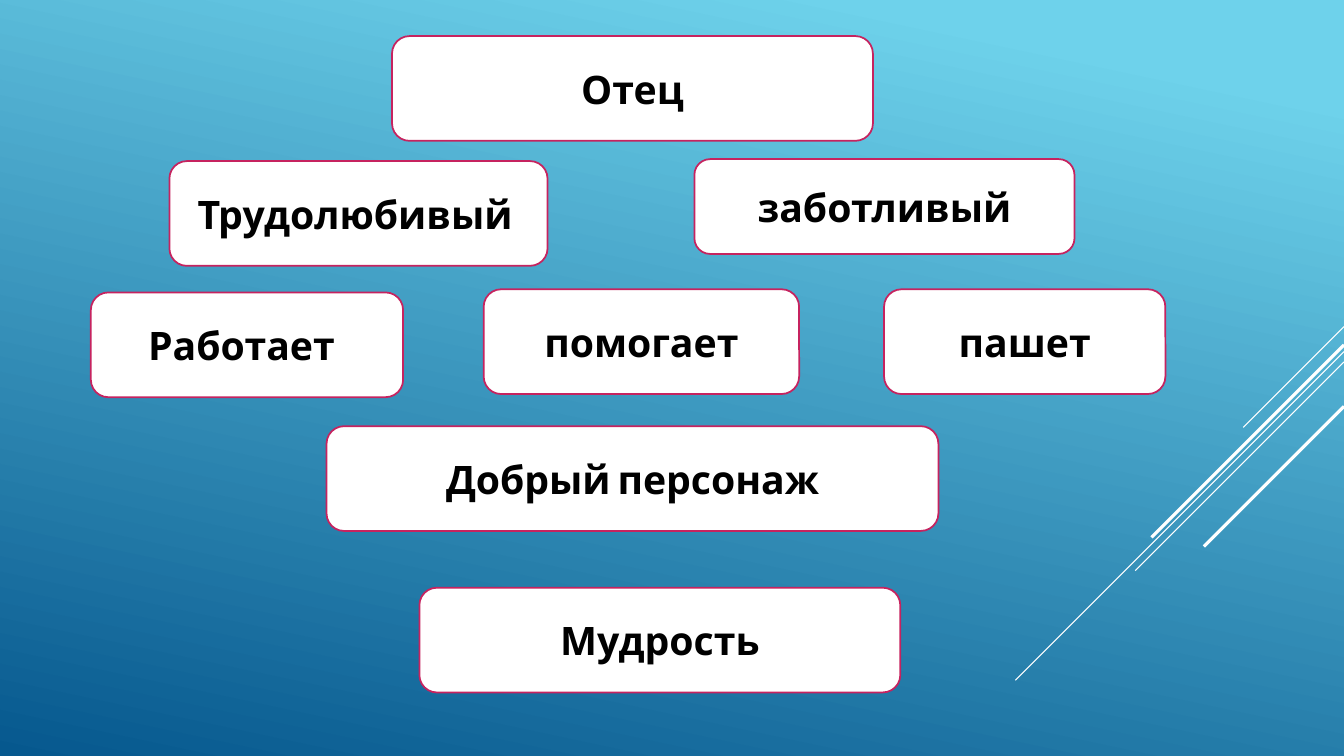
from dataclasses import dataclass

from lxml.etree import SubElement
from pptx import Presentation
from pptx.dml.color import RGBColor
from pptx.enum.shapes import MSO_CONNECTOR as Connector, MSO_SHAPE as Preset
from pptx.enum.text import MSO_ANCHOR as Anchor, PP_ALIGN as Align
from pptx.oxml.ns import qn
from pptx.util import Cm, Pt

# Content: text runs, left, top, width (cm); a lone space is a small gap
ROW_HEIGHT = 2.64
CARDS = [
    (["Отец"], 9.88, 0.91, 12.12, ROW_HEIGHT),
    (["заботливый"], 17.5, 4.01, 9.58, 2.39),
    (["Трудолюбивый", " "], 4.27, 4.06, 9.53, ROW_HEIGHT),
    (["пашет"], 22.28, 7.29, 7.09, ROW_HEIGHT),
    (["помогает"], 12.19, 7.29, 7.95, ROW_HEIGHT),
    (["Работает "], 2.29, 7.37, 7.87, ROW_HEIGHT),
    (["Добрый", " ", "персонаж"], 8.23, 10.74, 15.42, ROW_HEIGHT),
    (["Мудрость"], 10.57, 14.81, 12.12, ROW_HEIGHT),
]

# Diagonals from the right edge: top, horizontal reach (cm), line width (pt)
DIAGONALS = [
    (8.23, 2.54, 0.75),
    (8.86, 8.28, 0.75),
    (9.12, 5.26, 0.75),
    (8.69, 4.85, 2.25),
    (10.24, 3.53, 2.25),
]
SLIDE_WIDTH, SLIDE_HEIGHT = 33.87, 19.05


@dataclass(frozen=True)
class Theme:
    font: str = "Quicksand"
    word_size: float = 28
    gap_size: float = 18
    text: RGBColor = RGBColor(0, 0, 0)
    white: RGBColor = RGBColor(255, 255, 255)
    border: RGBColor = RGBColor.from_string("C6235F")
    border_width: float = 1.25
    sky: RGBColor = RGBColor.from_string("6ED2EB")
    sea: RGBColor = RGBColor.from_string("06588E")
    gradient_angle: float = 258


THEME = Theme()


def paint_background(slide):
    fill = slide.background.fill
    fill.gradient()
    fill.gradient_angle = THEME.gradient_angle
    stops = [(0.1, THEME.sky), (1, THEME.sea)]
    for stop, (position, color) in zip(fill.gradient_stops, stops):
        stop.position = position
        stop.color.rgb = color


def add_diagonal(slide, top, reach, width):
    line = slide.shapes.add_connector(
        Connector.STRAIGHT, Cm(SLIDE_WIDTH), Cm(top),
        Cm(SLIDE_WIDTH - reach), Cm(top + reach))
    line.line.color.rgb = THEME.white
    line.line.width = Pt(width)
    SubElement(line._element.spPr, qn("a:effectLst"))


def add_text(paragraph, text, *, size, bold, color=THEME.text):
    run = paragraph.add_run()
    run.text = text
    run.font.name = THEME.font
    run.font.size = Pt(size)
    run.font.bold = bold
    run.font.color.rgb = color


def add_card(slide, words, left, top, width, height):
    shape = slide.shapes.add_shape(
        Preset.ROUNDED_RECTANGLE, Cm(left), Cm(top), Cm(width), Cm(height))
    shape.shadow.inherit = False
    shape.fill.solid()
    shape.fill.fore_color.rgb = THEME.white
    shape.line.color.rgb = THEME.border
    shape.line.width = Pt(THEME.border_width)

    frame = shape.text_frame
    frame.word_wrap = True
    frame.vertical_anchor = Anchor.MIDDLE
    paragraph = frame.paragraphs[0]
    paragraph.alignment = Align.CENTER
    for word in words:
        is_gap = word == " "
        add_text(paragraph, word, bold=not is_gap,
                 size=THEME.gap_size if is_gap else THEME.word_size)


def main():
    presentation = Presentation()
    presentation.slide_width = Cm(SLIDE_WIDTH)
    presentation.slide_height = Cm(SLIDE_HEIGHT)
    blank_layout = presentation.slide_layouts[6]
    slide = presentation.slides.add_slide(blank_layout)

    # Backdrop
    paint_background(slide)
    for diagonal in DIAGONALS:
        add_diagonal(slide, *diagonal)

    # Word cards
    for card in CARDS:
        add_card(slide, *card)

    presentation.save("out.pptx")


if __name__ == "__main__":
    main()
